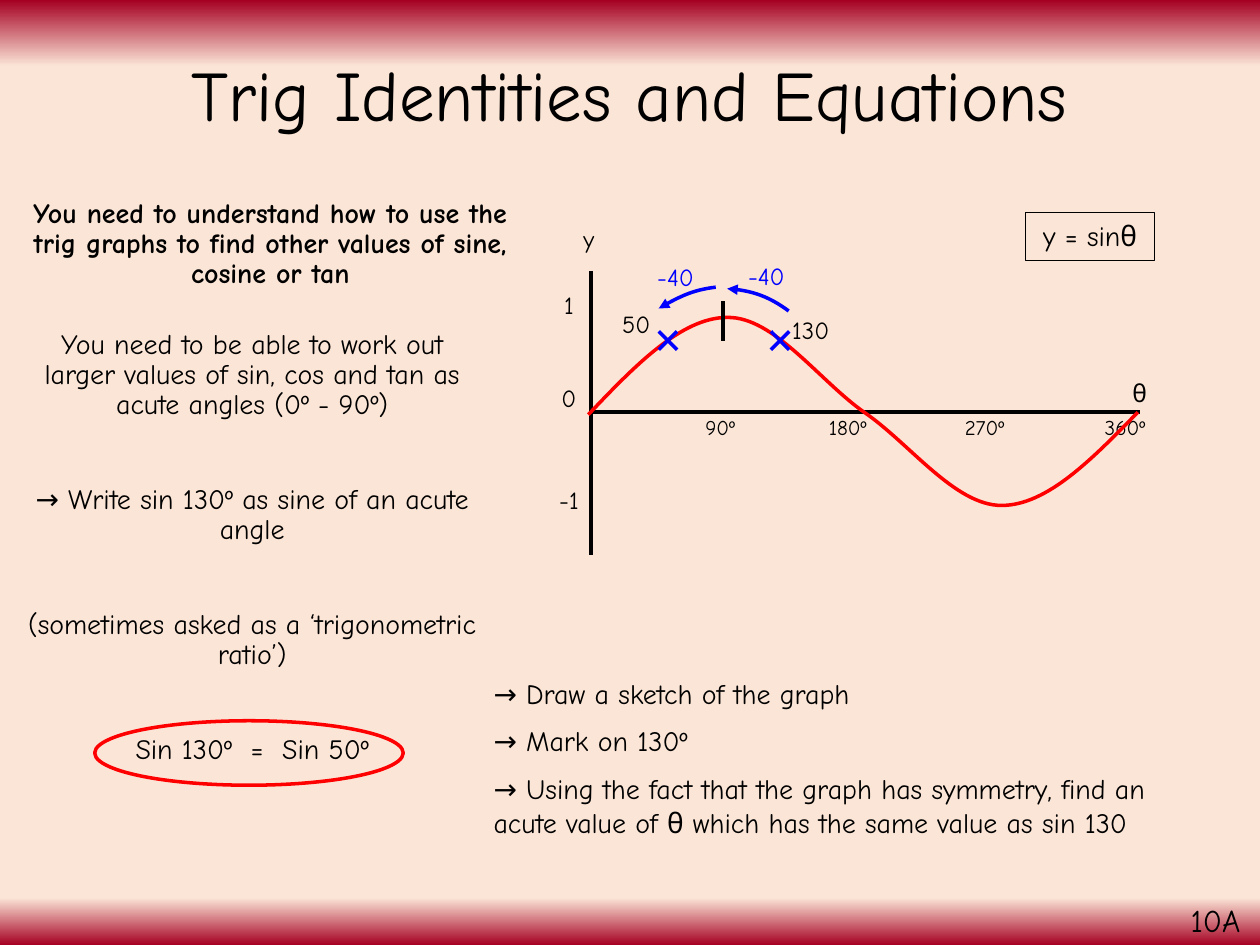
"""Build a slide on finding acute angles from the symmetry of the sine graph."""
import pptx
import pptx.dml.color
import pptx.enum.shapes
import pptx.enum.text
import pptx.oxml.ns
import pptx.util
from lxml import etree

Cm = pptx.util.Cm
Pt = pptx.util.Pt
qn = pptx.oxml.ns.qn
ALIGN = pptx.enum.text.PP_ALIGN
ANCHOR = pptx.enum.text.MSO_ANCHOR

FONT = "Comic Neue"
COLOURS = {
    "ink": "000000",
    "curve": "FF0000",
    "mark": "0000FF",
    "edge": "A50021",
    "paper": "FBE5D6",
}
BACKGROUND_STOPS = [(0, "edge"), (7, "paper"), (95, "paper"), (100, "edge")]

AXIS_Y = 8.31
AXIS_X = 11.91
SINE_POINTS = [
    (11.86, 8.36), (12.8, 7.37), (13.74, 6.4), (14.66, 6.4),
    (15.6, 6.38), (16.51, 7.67), (17.42, AXIS_Y),
    (18.34, 8.94), (19.25, 10.19), (20.19, 10.19),
    (21.11, 10.19), (22.02, 9.25), (22.94, AXIS_Y),
]
ARROW_ARCS = [
    [(14.66, 5.82), (15.09, 5.84), (15.52, 5.99), (15.9, 6.27)],
    [(13.28, 6.22), (13.61, 6.02), (14.0, 5.84), (14.43, 5.79)],
]
DEGREE_LABELS = [("90º", 13.97, 1.3), ("180º", 16.46, 2.29),
                 ("270º", 19.2, 2.77), ("360º", 22.02, 2.77)]
VALUE_LABELS = [("1", 5.72), ("0", 7.59), ("-1", 9.65)]
GRAPH_LABELS = [
    ("y", 11.51, 4.39, "ink"),
    ("θ", 22.58, 7.49, "ink"),
    ("130", 15.72, 6.22, "ink"),
    ("50", 12.29, 6.1, "ink"),
    ("-40", 14.83, 5.13, "mark"),
    ("-40", 13.0, 5.16, "mark"),
]
TASK = [
    "You need to be able to work out larger values of sin, cos and tan as acute angles (0º - 90º)",
    "→ Write sin 130º as sine of an acute angle",
    "(sometimes asked as a ‘trigonometric ratio’)",
    "Sin 130º  =  Sin 50º",
]
STEPS = [
    "→ Draw a sketch of the graph",
    "→ Mark on 130º",
    "→ Using the fact that the graph has symmetry, find an acute value of θ "
    "which has the same value as sin 130",
]


def rgb(name):
    """Return the named colour."""
    return pptx.dml.color.RGBColor.from_string(COLOURS[name])


def style_line(line, colour, width):
    """Give a line its colour and its width in points."""
    line.color.rgb = rgb(colour)
    line.width = Pt(width)


def paint_background(slide):
    """Fill the background with a gradient from top to bottom."""
    fill = slide.background.fill
    fill.gradient()
    fill.gradient_angle = 270
    stops = slide.background._cSld.find(".//" + qn("a:gsLst"))
    for stop in list(stops):
        stops.remove(stop)
    for percent, name in BACKGROUND_STOPS:
        stop = etree.SubElement(stops, qn("a:gs"), pos=str(percent * 1000))
        etree.SubElement(stop, qn("a:srgbClr"), val=COLOURS[name])


def add_text(slide, text, left, top, width, height, size=16, colour="ink", bold=False,
             align=ALIGN.LEFT, anchor=ANCHOR.TOP, spacing=None, gap=0, indent=0, wrap=True):
    """Add a text box holding one paragraph or a list of paragraphs."""
    shape = slide.shapes.add_textbox(Cm(left), Cm(top), Cm(width), Cm(height))
    frame = shape.text_frame
    frame.word_wrap = wrap
    frame.vertical_anchor = anchor
    frame.text = text if isinstance(text, str) else "\n".join(text)
    for index, paragraph in enumerate(frame.paragraphs):
        paragraph.alignment = align
        paragraph.line_spacing = spacing
        paragraph.space_before = Pt(gap if index else 0)
        if indent:
            paragraph._p.get_or_add_pPr().set("marL", str(Cm(indent)))
        font = paragraph.runs[0].font
        font.name = FONT
        font.size = Pt(size)
        font.bold = bold
        font.color.rgb = rgb(colour)
    return shape


def add_line(slide, start, end, colour="ink", width=2):
    """Add a straight line between two points."""
    connector = slide.shapes.add_connector(
        pptx.enum.shapes.MSO_CONNECTOR.STRAIGHT, *map(Cm, start + end))
    style_line(connector.line, colour, width)
    etree.SubElement(connector._element.spPr, qn("a:effectLst"))


def add_cross(slide, left, top, size=0.37):
    """Mark a point on the curve with a cross."""
    right, bottom = left + size, top + size
    add_line(slide, (left, top), (right, bottom), "mark")
    add_line(slide, (right, top), (left, bottom), "mark")


def add_curve(slide, points, colour, arrow=False):
    """Add a chain of cubic curves, with an arrowhead at its start if asked."""
    corners = [(Cm(x), Cm(y)) for x, y in points]
    builder = slide.shapes.build_freeform(*corners[0])
    builder.add_line_segments(corners[1:], close=False)
    shape = builder.convert_to_shape()
    shape.shadow.inherit = False
    shape.fill.background()
    style_line(shape.line, colour, 2)
    outline = shape._element.find(".//" + qn("a:path"))
    segments = outline.findall(qn("a:lnTo"))
    for first in range(0, len(segments), 3):
        cubic = etree.SubElement(outline, qn("a:cubicBezTo"))
        for segment in segments[first:first + 3]:
            cubic.append(segment[0])
            outline.remove(segment)
    if arrow:
        line = shape._element.spPr.find(qn("a:ln"))
        etree.SubElement(line, qn("a:headEnd"), type="triangle")


def add_ellipse(slide, left, top, width, height):
    """Ring the answer with an unfilled ellipse."""
    shape = slide.shapes.add_shape(
        pptx.enum.shapes.MSO_SHAPE.OVAL, Cm(left), Cm(top), Cm(width), Cm(height))
    shape.shadow.inherit = False
    shape.fill.background()
    style_line(shape.line, "curve", 2)


def add_graph(slide):
    """Draw the sine graph with its axes, labels and marks."""
    add_line(slide, (AXIS_X, AXIS_Y), (22.99, AXIS_Y))
    add_line(slide, (AXIS_X, 5.46), (AXIS_X, 11.18), width=2.25)
    for text, left, width in DEGREE_LABELS:
        add_text(slide, text, left, 8.23, width, 0.76, size=12)
    for text, top in VALUE_LABELS:
        add_text(slide, text, 10.77, top, 1.4, 0.84, size=14, align=ALIGN.CENTER)
    add_curve(slide, SINE_POINTS, "curve")
    for left in (15.54, 13.28):
        add_cross(slide, left, 6.68)
    add_line(slide, (14.58, 6.07), (14.58, 6.88))
    for points in ARROW_ARCS:
        add_curve(slide, points, "mark", arrow=True)
    for text, left, top, colour in GRAPH_LABELS:
        add_text(slide, text, left, top, 1.45, 0.84, size=14, colour=colour)


def main():
    """Build and save the slide."""
    presentation = pptx.Presentation()
    presentation.slide_width, presentation.slide_height = Cm(25.4), Cm(19.05)
    slide = presentation.slides.add_slide(presentation.slide_layouts[6])
    paint_background(slide)
    add_text(slide, "Trig Identities and Equations", 1.75, 0.61, 21.9, 2.77, size=40.5,
             align=ALIGN.CENTER, anchor=ANCHOR.MIDDLE, spacing=0.9)
    add_text(slide, "You need to understand how to use the trig graphs to find other "
             "values of sine, cosine or tan", 0.41, 3.89, 10.08, 13.26,
             bold=True, align=ALIGN.CENTER, spacing=0.9)
    add_text(slide, "10A", 23.75, 18.03, 1.65, 1.02, size=18, wrap=False)
    add_text(slide, TASK, -0.43, 6.53, 10.39, 10.49, align=ALIGN.CENTER,
             spacing=0.9, gap=37, indent=0.64)
    equation = add_text(slide, "y = sinθ", 20.68, 4.29, 2.59, 0.97, align=ALIGN.CENTER)
    style_line(equation.line, "ink", 0.75)
    add_graph(slide)
    add_text(slide, STEPS, 9.7, 13.51, 14.96, 3.66, gap=8)
    add_ellipse(slide, 1.91, 14.53, 6.22, 1.3)
    presentation.save("out.pptx")


if __name__ == "__main__":
    main()
